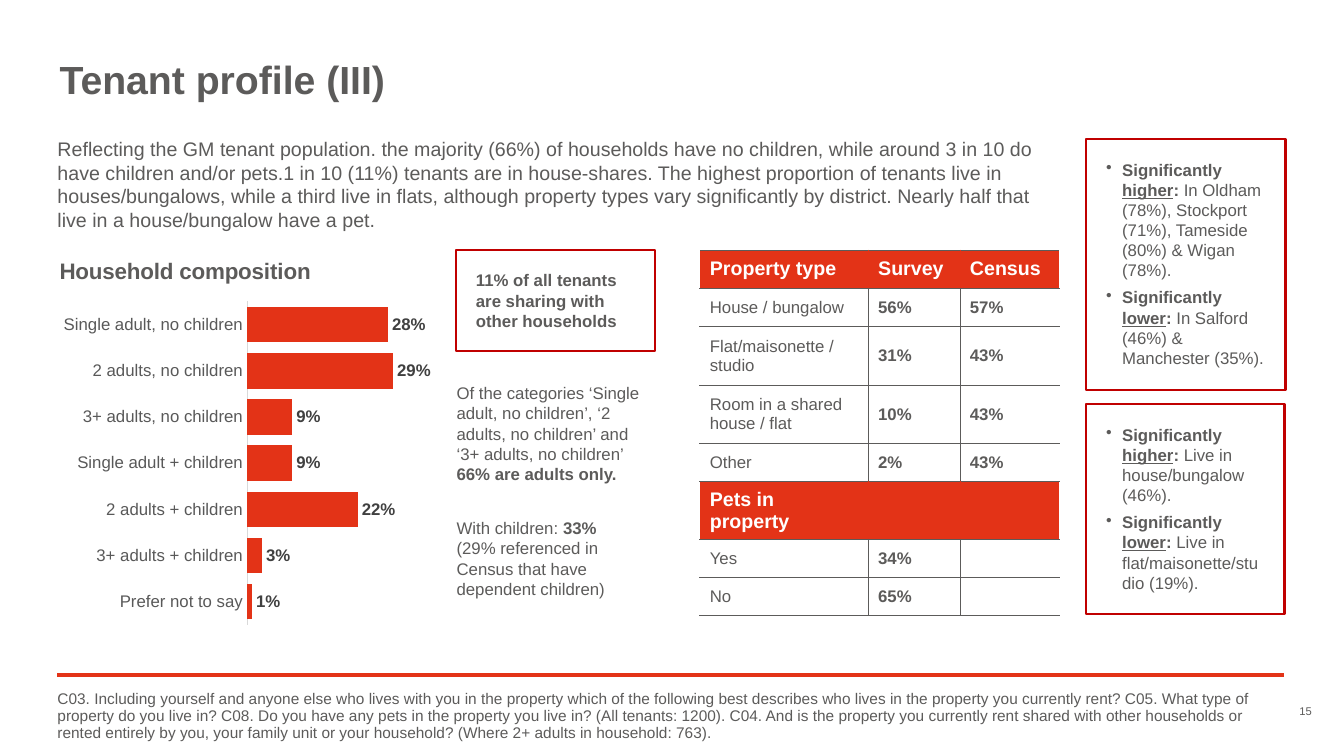
from lxml import etree
from pptx import Presentation
from pptx.chart.data import CategoryChartData
from pptx.dml.color import RGBColor
from pptx.enum.chart import XL_CHART_TYPE, XL_LABEL_POSITION, XL_TICK_MARK
from pptx.enum.shapes import MSO_CONNECTOR, MSO_SHAPE
from pptx.enum.text import MSO_ANCHOR, PP_ALIGN
from pptx.oxml.ns import qn
from pptx.util import Inches, Pt

BAR = XL_CHART_TYPE.BAR_CLUSTERED
OUTSIDE_END = XL_LABEL_POSITION.OUTSIDE_END
NO_TICK = XL_TICK_MARK.NONE
STRAIGHT = MSO_CONNECTOR.STRAIGHT
RECTANGLE = MSO_SHAPE.RECTANGLE
TOP, MIDDLE, BOTTOM = MSO_ANCHOR.TOP, MSO_ANCHOR.MIDDLE, MSO_ANCHOR.BOTTOM
LEFT, RIGHT = PP_ALIGN.LEFT, PP_ALIGN.RIGHT

FONT = "Arial"
COLOURS = {
    "text": "5C5B5A",
    "accent": "E33317",
    "frame": "C00000",
    "label": "404040",
    "category": "595959",
    "axis": "D9D9D9",
    "white": "FFFFFF",
}
HOUSEHOLDS = {
    "Single adult, no children": 0.28,
    "2 adults, no children": 0.29,
    "3+ adults, no children": 0.09,
    "Single adult + children": 0.09,
    "2 adults + children": 0.22,
    "3+ adults + children": 0.03,
    "Prefer not to say": 0.01,
}
PROPERTY_ROWS = [
    ("Property type", "Survey", "Census"),
    ("House / bungalow", "56%", "57%"),
    ("Flat/maisonette / studio", "31%", "43%"),
    ("Room in a shared house / flat", "10%", "43%"),
    ("Other", "2%", "43%"),
    ("Pets in property", "", ""),
    ("Yes", "34%", ""),
    ("No", "65%", ""),
]
HEADER_ROWS = (0, 5)
TALL_ROWS = (2, 3)
INTRO = (
    "Reflecting the GM tenant population. the majority (66%) of households have no children, "
    "while around 3 in 10 do have children and/or pets.1 in 10 (11%) tenants are in house-shares. "
    "The highest proportion of tenants live in houses/bungalows, while a third live in flats, "
    "although property types vary significantly by district. "
    "Nearly half that live in a house/bungalow have a pet."
)
FOOTNOTE = (
    "C03. Including yourself and anyone else who lives with you in the property which of the "
    "following best describes who lives in the property you currently rent? C05. What type of "
    "property do you live in? C08. Do you have any pets in the property you live in? "
    "(All tenants: 1200). C04. And is the property you currently rent shared with other households "
    "or rented entirely by you, your family unit or your household? "
    "(Where 2+ adults in household: 763)."
)


def rgb(name):
    return RGBColor.from_string(COLOURS[name])


def set_font(font, size, colour="text", bold=None):
    font.name, font.size, font.bold = FONT, Pt(size), bold
    font.color.rgb = rgb(colour)


def set_frame(frame, insets, anchor=TOP):
    frame.word_wrap = True
    frame.vertical_anchor = anchor
    frame.margin_left, frame.margin_top, frame.margin_right, frame.margin_bottom = map(Inches, insets)


def write_spans(para, spans, size):
    set_font(para.font, size)
    para.alignment = LEFT
    for text, style in spans:
        span = para.add_run()
        span.text = text
        set_font(span.font, size, bold="b" in style)
        span.font.underline = "u" in style


def add_text(page, area, spans, size, insets=(0.1, 0.05, 0.1, 0.05), anchor=TOP):
    box = page.shapes.add_textbox(*map(Inches, area))
    set_frame(box.text_frame, insets, anchor)
    para = box.text_frame.paragraphs[0]
    write_spans(para, spans, size)
    return para


def add_framed_box(page, area, paragraphs, bulleted=False):
    box = page.shapes.add_shape(RECTANGLE, *map(Inches, area))
    box.shadow.inherit = False
    box.fill.background()
    box.line.color.rgb = rgb("frame")
    box.line.width = Pt(1.5)
    frame = box.text_frame
    set_frame(frame, (0.2, 0.2, 0.2, 0.2))
    for index, spans in enumerate(paragraphs):
        para = frame.add_paragraph() if index else frame.paragraphs[0]
        write_spans(para, spans, 12)
        para.space_after = Pt(5)
        if bulleted:
            properties = para._p.get_or_add_pPr()
            properties.set("marL", str(Inches(0.16)))
            properties.set("indent", str(-Inches(0.16)))
            bullet = etree.Element(qn("a:buChar"), char="•")
            properties.insert_element_before(bullet, "a:tabLst", "a:defRPr", "a:extLst")


def significance(word, finding):
    return [("Significantly ", "b"), (word, "bu"), (": ", "b"), (finding, "")]


def place_in_chart(part, index, settings):
    for layout in part.findall(qn("c:layout")):
        part.remove(layout)
    layout = etree.Element(qn("c:layout"))
    manual = etree.SubElement(layout, qn("c:manualLayout"))
    for tag, value in settings.items():
        etree.SubElement(manual, qn(f"c:{tag}"), val=str(value))
    part.insert(index, layout)


def add_household_chart(page):
    data = CategoryChartData(number_format="0%")
    data.categories = list(HOUSEHOLDS)
    data.add_series("Series 1", list(HOUSEHOLDS.values()))
    area = map(Inches, (0.51, 2.39, 4.06, 3.86))
    chart = page.shapes.add_chart(BAR, *area, data).chart
    set_font(chart.font, 10)
    chart.has_legend = False
    chart.has_title = True
    title = chart.chart_title.text_frame
    title.text = "Household composition"
    set_font(title.paragraphs[0].font, 16, bold=True)

    edges = {"xMode": "edge", "yMode": "edge"}
    place_in_chart(chart.element.find(".//" + qn("c:title")), 1, {**edges, "x": 0.01, "y": 0.03})
    place_in_chart(
        chart.element.find(".//" + qn("c:plotArea")), 0,
        {"layoutTarget": "inner", **edges, "x": 0.478, "y": 0.156, "w": 0.431, "h": 0.831},
    )

    categories, values = chart.category_axis, chart.value_axis
    categories.reverse_order = True
    categories.major_tick_mark = categories.minor_tick_mark = NO_TICK
    categories.format.line.color.rgb = rgb("axis")
    categories.format.line.width = Pt(0.75)
    set_font(categories.tick_labels.font, 12, "category")
    values.has_major_gridlines = False
    values.minimum_scale, values.maximum_scale = 0, 0.35
    values.visible = False

    plot = chart.plots[0]
    plot.gap_width = 30
    plot.vary_by_categories = False
    plot.series[0].format.fill.solid()
    plot.series[0].format.fill.fore_color.rgb = rgb("accent")
    plot.has_data_labels = True
    labels = plot.data_labels
    labels.show_value = True
    labels.number_format, labels.number_format_is_linked = "0%", False
    labels.position = OUTSIDE_END
    set_font(labels.font, 12, "label", True)


def set_borders(cell, **sides):
    properties = cell._tc.get_or_add_tcPr()
    for side, colour in sides.items():
        line = etree.SubElement(properties, qn(f"a:ln{side}"), w=str(Pt(0.5)))
        fill = etree.SubElement(line, qn("a:solidFill"))
        etree.SubElement(fill, qn("a:srgbClr"), val=COLOURS[colour])


def add_property_table(page):
    area = map(Inches, (6.94, 2.48, 3.57, 3.44))
    table = page.shapes.add_table(len(PROPERTY_ROWS), 3, *area).table
    table.first_row = table.horz_banding = False
    for column, width in zip(table.columns, (1.67, 0.91, 0.99)):
        column.width = Inches(width)
    for row, texts in enumerate(PROPERTY_ROWS):
        table.rows[row].height = Inches(0.58 if row in TALL_ROWS else 0.38)
        header = row in HEADER_ROWS
        inner = "accent" if header else "text"
        for column, text in enumerate(texts):
            cell = table.cell(row, column)
            cell.vertical_anchor = MIDDLE
            set_borders(cell, L=inner if column else "white", R=inner if column < 2 else "white",
                        T="text", B="text")
            if header:
                cell.fill.solid()
                cell.fill.fore_color.rgb = rgb("accent")
            else:
                cell.fill.background()
            cell.text = text
            size, colour = (14, "white") if header else (12, "text")
            set_font(cell.text_frame.paragraphs[0].font, size, colour, header or column > 0)


def add_title(page, text):
    title = page.shapes.title
    title.left, title.top, title.width, title.height = map(Inches, (0.59, 0.6, 12.16, 0.5))
    set_frame(title.text_frame, (0, 0, 0, 0))
    title.text_frame.text = text
    para = title.text_frame.paragraphs[0]
    para.alignment, para.line_spacing = LEFT, 0.9
    set_font(para.font, 28, bold=True)


def add_footer(page):
    rule = page.shapes.add_connector(STRAIGHT, *map(Inches, (0.57, 6.7, 12.73, 6.7)))
    rule.line.color.rgb = rgb("accent")
    rule.line.width = Pt(3)
    etree.SubElement(rule.element.spPr, qn("a:effectLst"))
    note = add_text(page, (0.57, 6.86, 12.16, 0.55), [(FOOTNOTE, "")], 11, (0, 0, 0, 0.05))
    note.line_spacing = 0.9
    number = add_text(page, (12.62, 6.99, 0.39, 0.13), [("15", "")], 8, (0, 0, 0, 0), BOTTOM)
    number.alignment = RIGHT


def main():
    deck = Presentation()
    deck.slide_width, deck.slide_height = Inches(13.33), Inches(7.5)
    page = deck.slides.add_slide(deck.slide_layouts[5])
    add_title(page, "Tenant profile (III)")
    add_text(page, (0.57, 1.36, 9.75, 0.94), [(INTRO, "")], 14, (0, 0, 0, 0))
    add_household_chart(page)
    add_framed_box(page, (4.52, 2.48, 1.98, 1),
                   [[("11% of all tenants are sharing with other households", "b")]])
    add_text(page, (4.43, 3.75, 2.04, 1.11), [
        ("Of the categories ‘Single adult, no children’, ‘2 adults, no children’ and "
         "‘3+ adults, no children’ ", ""),
        ("66% are adults only.", "b")], 12)
    add_text(page, (4.43, 5.09, 1.82, 0.91), [
        ("With children: ", ""), ("33%", "b"),
        (" (29% referenced in Census that have dependent children)", "")], 12)
    add_property_table(page)
    add_framed_box(page, (10.77, 1.38, 1.98, 2.49), [
        significance("higher", "In Oldham (78%), Stockport (71%), Tameside (80%) & Wigan (78%)."),
        significance("lower", "In Salford (46%) & Manchester (35%).")], bulleted=True)
    add_framed_box(page, (10.77, 4.01, 1.97, 2.08), [
        significance("higher", "Live in house/bungalow (46%)."),
        significance("lower", "Live in flat/maisonette/studio (19%).")], bulleted=True)
    add_footer(page)
    deck.save("out.pptx")


if __name__ == "__main__":
    main()
